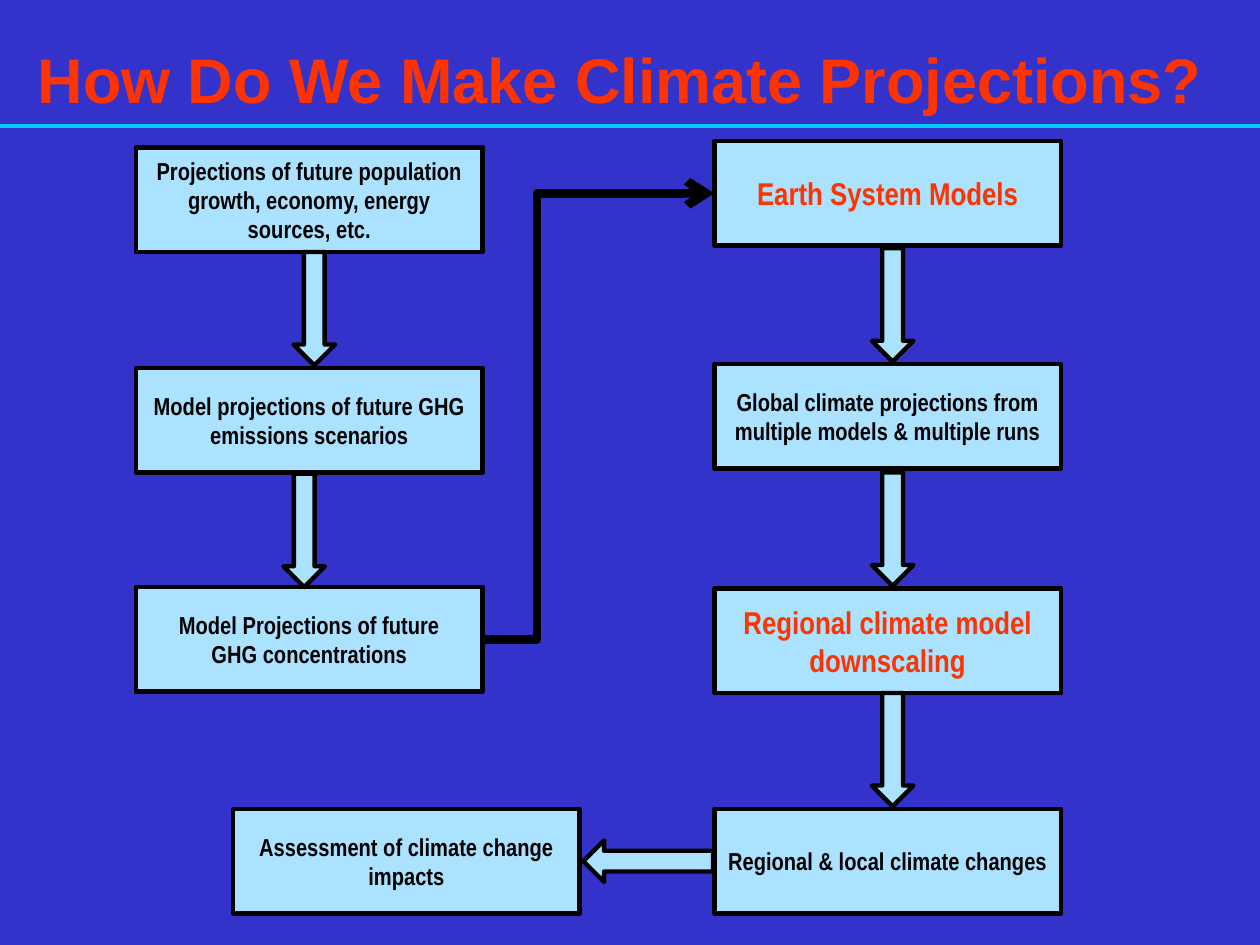
from dataclasses import dataclass

from lxml.etree import SubElement
from pptx import Presentation
from pptx.dml.color import RGBColor as Rgb
from pptx.enum.shapes import MSO_CONNECTOR as Link, MSO_SHAPE as Kind
from pptx.enum.text import MSO_ANCHOR as Anchor, PP_ALIGN as Align
from pptx.oxml.ns import qn
from pptx.shapes.autoshape import Shape
from pptx.shapes.connector import Connector
from pptx.slide import Slide
from pptx.util import Inches, Pt


@dataclass(frozen=True)
class Theme:
    back: Rgb = Rgb(0x33, 0x33, 0xCC)
    fill: Rgb = Rgb(0xAA, 0xE2, 0xFF)
    ink: Rgb = Rgb(0, 0, 0)
    accent: Rgb = Rgb(0xFF, 0x33, 0)
    rule: Rgb = Rgb(0, 0xCC, 0xFF)
    head: str = "Arial"
    body: str = "Arial Narrow"
    title: int = 36
    large: int = 18
    small: int = 14
    edge: float = 2.5
    thick: float = 5


@dataclass(frozen=True)
class Step:
    left: float
    top: float
    text: str
    key: bool = False


@dataclass(frozen=True)
class Arrow:
    left: float
    top: float
    wide: float = 0.33
    high: float = 0.9
    kind: Kind = Kind.DOWN_ARROW


THEME = Theme()
BOX_W, BOX_H = 2.75, 0.83
COL_A, COL_B = 1.08, 5.67
MID_B = 6.92

SOURCE = Step(COL_A, 1.17, "Projections of future population growth, economy, energy sources, etc.")
SCENES = Step(COL_A, 2.92, "Model projections of future GHG emissions scenarios")
GASES = Step(COL_A, 4.66, "Model Projections of future\nGHG concentrations")
EARTH = Step(COL_B, 1.12, "Earth System Models", True)
GLOBE = Step(COL_B, 2.89, "Global climate projections from multiple models & multiple runs")
REGION = Step(COL_B, 4.67, "Regional climate model downscaling", True)
LOCAL = Step(COL_B, 6.42, "Regional & local climate changes")
IMPACT = Step(1.85, 6.42, "Assessment of climate change impacts")
STEPS = (SOURCE, SCENES, GASES, EARTH, GLOBE, REGION, LOCAL, IMPACT)

ARROWS = (
    Arrow(2.33, 2), Arrow(2.25, 3.76),
    Arrow(MID_B, 1.97), Arrow(MID_B, 3.75), Arrow(MID_B, 5.5),
    Arrow(4.63, 6.67, 1.03, 0.33, Kind.LEFT_ARROW),
)


def write(shape: Shape, text: str, face: str, size: int, color: Rgb) -> None:
    frame = shape.text_frame
    frame.word_wrap = True
    frame.vertical_anchor = Anchor.MIDDLE
    frame.text = text
    for para in frame.paragraphs:
        para.alignment = Align.CENTER
        font = para.font
        font.name, font.size, font.bold = face, Pt(size), True
        font.color.rgb = color


def add_block(slide: Slide, kind: Kind, left: float, top: float,
              wide: float, high: float) -> Shape:
    shape = slide.shapes.add_shape(
        kind, Inches(left), Inches(top), Inches(wide), Inches(high))
    shape.shadow.inherit = False
    shape.fill.solid()
    shape.fill.fore_color.rgb = THEME.fill
    shape.line.color.rgb = THEME.ink
    shape.line.width = Pt(THEME.edge)
    return shape


def add_step(slide: Slide, step: Step) -> Shape:
    box = add_block(slide, Kind.RECTANGLE, step.left, step.top, BOX_W, BOX_H)
    size = THEME.large if step.key else THEME.small
    color = THEME.accent if step.key else THEME.ink
    write(box, step.text, THEME.body, size, color)
    return box


def add_link(slide: Slide, kind: Link, wide: float, color: Rgb,
             ends: tuple[float, float, float, float]) -> Connector:
    link = slide.shapes.add_connector(kind, *(Inches(x) for x in ends))
    link.line.color.rgb = color
    link.line.width = Pt(wide)
    SubElement(link._element.spPr, qn("a:effectLst"))
    return link


def add_title(slide: Slide) -> None:
    box = slide.shapes.add_textbox(
        Inches(-0.08), Inches(0.25), Inches(10), Inches(0.75))
    write(box, "How Do We Make Climate Projections?",
          THEME.head, THEME.title, THEME.accent)
    props = box.text_frame.paragraphs[0].runs[0]._r.get_or_add_rPr()
    effects = SubElement(props, qn("a:effectLst"))
    shade = SubElement(effects, qn("a:outerShdw"), blurRad="38100",
                       dist="38100", dir="2700000", algn="tl")
    SubElement(shade, qn("a:srgbClr"), val=str(THEME.ink))


def join(slide: Slide, start: Shape, end: Shape) -> None:
    """Run an elbow with an arrowhead from the right of start to the left of end."""
    link = add_link(slide, Link.ELBOW, THEME.thick, THEME.ink,
                    (COL_A + BOX_W, GASES.top + BOX_H / 2,
                     COL_B, EARTH.top + BOX_H / 2))
    link.begin_connect(start, 3)
    link.end_connect(end, 1)
    bend = link._element.spPr.find(qn("a:prstGeom")).find(qn("a:avLst"))
    SubElement(bend, qn("a:gd"), name="adj1", fmla="val 23500")
    SubElement(link.line._get_or_add_ln(), qn("a:tailEnd"), type="arrow")


def main() -> None:
    deck = Presentation()
    deck.slide_width, deck.slide_height = Inches(10), Inches(7.5)
    slide = deck.slides.add_slide(deck.slide_layouts[6])
    slide.background.fill.solid()
    slide.background.fill.fore_color.rgb = THEME.back

    add_title(slide)
    add_link(slide, Link.STRAIGHT, THEME.edge, THEME.rule, (0, 1, 10, 1))
    boxes = {step: add_step(slide, step) for step in STEPS}
    for item in ARROWS:
        add_block(slide, item.kind, item.left, item.top, item.wide, item.high)
    join(slide, boxes[GASES], boxes[EARTH])
    deck.save("out.pptx")


if __name__ == "__main__":
    main()
